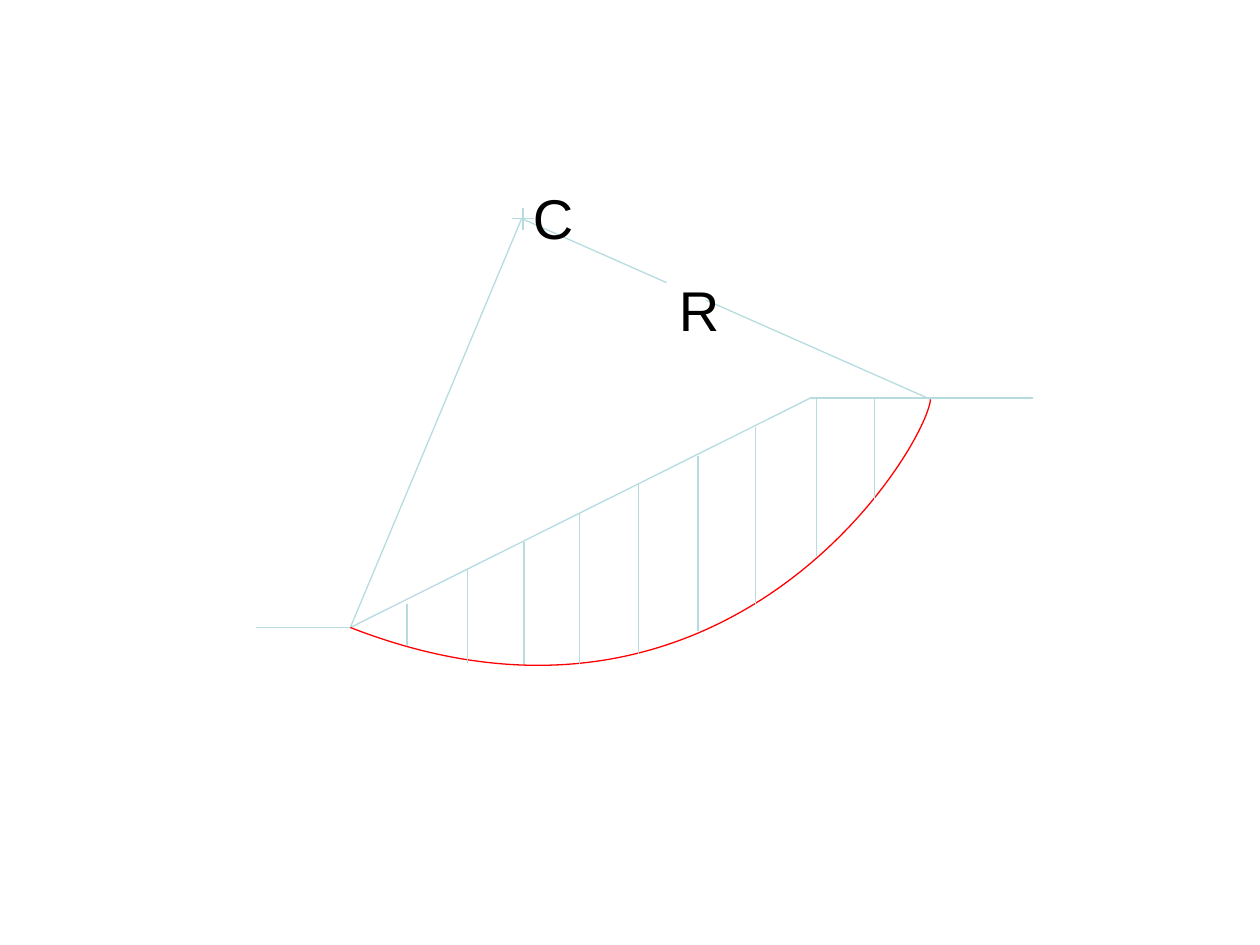
from lxml import etree
from pptx import Presentation
from pptx.dml.color import RGBColor
from pptx.enum import shapes, text
from pptx.oxml import ns
from pptx.util import Pt

PALE, RED, BLACK, WHITE = "B6DCDF", "FF0000", "000000", "FFFFFF"

TOE = (200.2, 358.6)
CREST = (463, 227.5)
EXIT = (531.7, 228.2)
CENTRE = (298.1, 124.9)
ARM = 6.3

# x, top and bottom of each slice edge, from the crest down to the toe
SLICES = [
    (499.7, 227.5, 285.1), (466.6, 227.5, 317.5), (431.6, 244.1, 344.9),
    (398.9, 260.6, 360.7), (365, 276.5, 373.7), (331.2, 293, 379.4),
    (299.5, 309.6, 379.4), (267.1, 324.7, 378.7), (232.6, 344.9, 369.4),
]


def rgb(tone):
    return RGBColor.from_string(tone)


def add_line(slide, start, end):
    line = slide.shapes.add_connector(
        shapes.MSO_CONNECTOR.STRAIGHT, *map(Pt, (*start, *end)))
    line.line.color.rgb = rgb(PALE)
    line.line.width = Pt(0.75)
    etree.SubElement(line._element.spPr, ns.qn("a:effectLst"))


def add_arc(slide, start, bends, end):
    """Draw one open Bezier curve with two control points."""
    form = slide.shapes.build_freeform(*map(Pt, start))
    form.add_line_segments(
        [(Pt(x), Pt(y)) for x, y in (*bends, end)], close=False)
    arc = form.convert_to_shape()
    # The three straight segments hold the points of a single cubic one.
    sides = list(arc._element.iter(ns.qn("a:lnTo")))
    curve = etree.SubElement(sides[0].getparent(), ns.qn("a:cubicBezTo"))
    for side in sides:
        curve.append(side[0])
        side.getparent().remove(side)
    arc.fill.background()
    arc.line.color.rgb = rgb(RED)
    arc.line.width = Pt(0.75)
    arc.shadow.inherit = False


def add_label(slide, words, left, top, fill=None):
    box = slide.shapes.add_textbox(Pt(left), Pt(top), Pt(22.3), Pt(31.7))
    if fill:
        box.fill.solid()
        box.fill.fore_color.rgb = rgb(fill)
    frame = box.text_frame
    frame.text = words
    frame.word_wrap = False
    frame.auto_size = text.MSO_AUTO_SIZE.SHAPE_TO_FIT_TEXT
    frame.margin_top = Pt(6.5)
    font = frame.paragraphs[0].runs[0].font
    font.name, font.size = "Arial", Pt(32)
    font.color.rgb = rgb(BLACK)


def main():
    deck = Presentation()
    deck.slide_width, deck.slide_height = Pt(720), Pt(540)
    slide = deck.slides.add_slide(deck.slide_layouts[6])

    add_line(slide, (590.4, CREST[1]), CREST)
    add_line(slide, CREST, TOE)
    add_line(slide, TOE, (146.2, TOE[1]))
    add_line(slide, EXIT, CENTRE)
    add_line(slide, CENTRE, TOE)
    add_arc(slide, TOE, [(416.2, 442.8), (529.2, 255.6)], EXIT)

    for x, top, base in SLICES:
        add_line(slide, (x, top), (x, base))

    x, y = CENTRE
    add_line(slide, (x + 0.7, y - ARM), (x + 0.7, y + ARM))
    add_line(slide, (x + ARM + 0.7, y), (x - ARM + 0.7, y))

    add_label(slide, "R", 380.9, 151.2, WHITE)
    add_label(slide, "C", 297.4, 98.6)
    deck.save("out.pptx")


if __name__ == "__main__":
    main()
